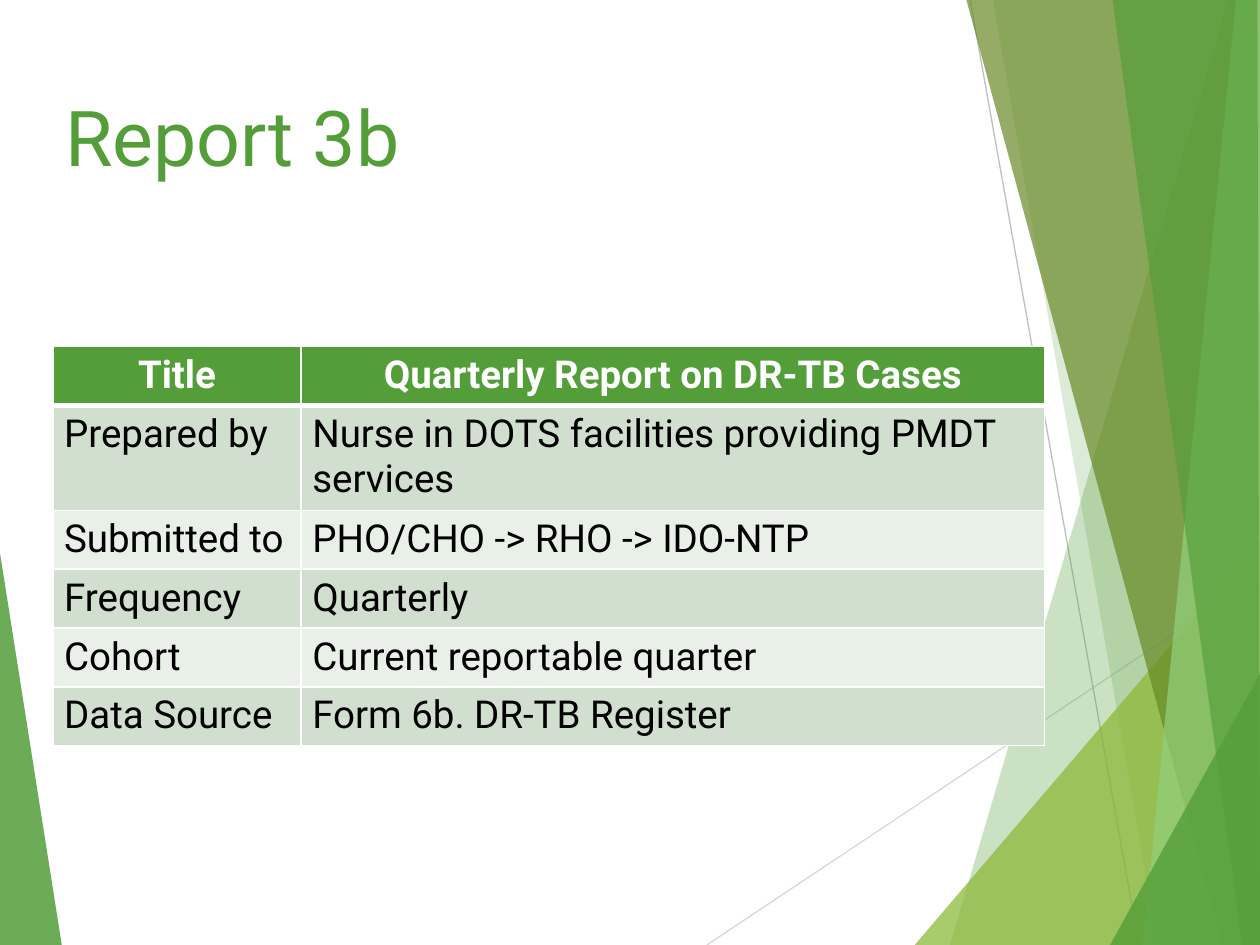
from lxml import etree
from pptx import Presentation
from pptx.dml.color import RGBColor
from pptx.enum.shapes import MSO_CONNECTOR
from pptx.enum.text import MSO_ANCHOR, PP_ALIGN
from pptx.oxml.ns import qn
from pptx.util import Inches, Pt

STRAIGHT = MSO_CONNECTOR.STRAIGHT
MIDDLE = MSO_ANCHOR.MIDDLE
CENTER, LEFT = PP_ALIGN.CENTER, PP_ALIGN.LEFT

THEME = {
    "font": "Roboto",
    "title_size": Pt(44),
    "cell_size": Pt(22),
    "green": "549E39",
    "lime": "8AB833",
    "olive": "678A26",
    "mint": "93D07D",
    "white": "FFFFFF",
    "black": "000000",
    "bands": ("D1DFCE", "E9F0E8"),
    "light_line": "D9D9D9",
    "dark_line": "BFBFBF",
}

prs = Presentation()
prs.slide_width, prs.slide_height = Inches(10), Inches(7.5)
s = prs.slides.add_slide(prs.slide_layouts[6])


def at(x, y):
    return round(prs.slide_width * x / 100), round(prs.slide_height * y / 100)


def style(p, size, color, bold=False):
    p.font.name, p.font.size, p.font.bold = THEME["font"], size, bold
    p.font.color.rgb = RGBColor.from_string(color)


left_facet = ("green", 85, [(0, 58.53), (4.9, 100), (0, 100)])
right_facets = [
    ("green", 30, [(97.5, 0), (75.4, 100), (100, 100), (100, 0)]),
    ("green", 20, [(78.8, 0), (91.9, 100), (100, 100), (100, 0)]),
    ("lime", 72, [(72.6, 100), (100, 57.2), (100, 100)]),
    ("olive", 70, [(76.7, 0), (97, 100), (100, 100), (100, 0)]),
    ("mint", 70, [(98.1, 0), (90.7, 100), (100, 100), (100, 0)]),
    ("green", 65, [(88.3, 0), (98.6, 100), (100, 100), (99.8, 0)]),
    ("green", 80, [(88.1, 100), (100, 71.33), (100, 100)]),
]
rays = [
    ("light_line", (56.1, 100), (100, 61)),
    ("dark_line", (77, 0), (90.4, 100)),
]

for color, start, end in rays:
    sp = s.shapes.add_connector(STRAIGHT, *at(*start), *at(*end))
    sp.line.color.rgb = RGBColor.from_string(THEME[color])
    sp.line.width = Pt(0.75)
    etree.SubElement(sp._element.spPr, qn("a:effectLst"))

for color, opacity, points in [left_facet, *right_facets]:
    outline = s.shapes.build_freeform(*at(*points[0]))
    outline.add_line_segments([at(*point) for point in points[1:]])
    sp = outline.convert_to_shape()
    sp.shadow.inherit = False
    sp.line.fill.background()
    sp.fill.solid()
    sp.fill.fore_color.rgb = RGBColor.from_string(THEME[color])
    rgb = sp._element.spPr.find(".//" + qn("a:srgbClr"))
    etree.SubElement(rgb, qn("a:alpha"), val=str(opacity * 1000))

tf = s.shapes.add_textbox(*at(4.2, 8.93), *at(78.7, 10.93)).text_frame
tf.word_wrap = True
tf.vertical_anchor = MIDDLE
p = tf.paragraphs[0]
p.text = "Report 3b"
style(p, THEME["title_size"], THEME["green"])

rows = [
    ("Title", "Quarterly Report on DR-TB Cases"),
    ("Prepared by", "Nurse in DOTS facilities providing PMDT services"),
    ("Submitted to", "PHO/CHO -> RHO -> IDO-NTP"),
    ("Frequency", "Quarterly"),
    ("Cohort", "Current reportable quarter"),
    ("Data Source", "Form 6b. DR-TB Register"),
]
col_shares = (19.7, 59)
row_share = 5.47
table = s.shapes.add_table(
    len(rows), len(col_shares), *at(4.2, 36.67), *at(sum(col_shares), row_share * len(rows))
).table
for column, share in zip(table.columns, col_shares):
    column.width = at(share, 0)[0]

for i, row in enumerate(rows):
    header = i == 0
    table.rows[i].height = at(0, row_share)[1]
    for j, text in enumerate(row):
        cell = table.cell(i, j)
        cell.margin_left = cell.margin_right = Inches(0.09)
        cell.margin_top = cell.margin_bottom = Inches(0.05)
        tcPr = cell._tc.get_or_add_tcPr()
        for side in "LRTB":
            heavy = (i, side) in ((0, "B"), (1, "T"))
            ln = etree.SubElement(tcPr, qn("a:ln" + side), w=str(Pt(3 if heavy else 1)))
            fill = etree.SubElement(ln, qn("a:solidFill"))
            etree.SubElement(fill, qn("a:srgbClr"), val=THEME["white"])
        cell.fill.solid()
        band = THEME["green"] if header else THEME["bands"][(i - 1) % 2]
        cell.fill.fore_color.rgb = RGBColor.from_string(band)
        p = cell.text_frame.paragraphs[0]
        p.text = text
        p.alignment = CENTER if header else LEFT
        style(p, THEME["cell_size"], THEME["white" if header else "black"], header)

prs.save("out.pptx")
